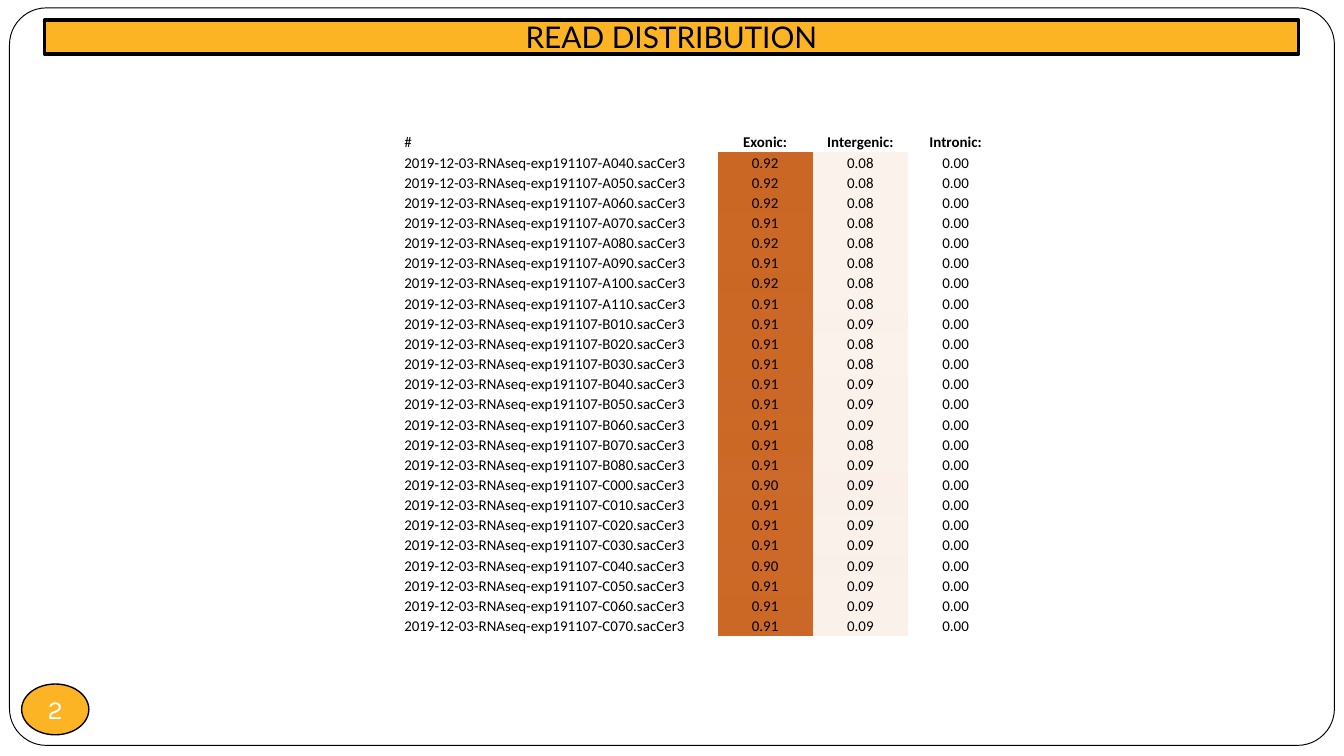
from dataclasses import dataclass

from lxml import etree
from pptx import Presentation
from pptx.dml.color import RGBColor
from pptx.enum.shapes import MSO_SHAPE
from pptx.enum.text import MSO_ANCHOR, MSO_AUTO_SIZE, PP_ALIGN
from pptx.oxml.ns import qn
from pptx.util import Cm, Pt

ROUNDED = MSO_SHAPE.ROUNDED_RECTANGLE
OVAL = MSO_SHAPE.OVAL
MIDDLE, BOTTOM = MSO_ANCHOR.MIDDLE, MSO_ANCHOR.BOTTOM
LEFT, CENTER = PP_ALIGN.LEFT, PP_ALIGN.CENTER
NO_AUTOFIT = MSO_AUTO_SIZE.NONE
NO_STYLE_NO_GRID = "{2D5ABB26-0587-4C30-8999-92F81FD0307C}"

COLORS = {
    "black": "000000",
    "white": "FFFFFF",
    "amber": "FCB424",
    "exonic 1": "CB6725",
    "exonic 2": "CB6826",
    "exonic 3": "CC6826",
    "exonic 4": "CC6827",
    "exonic 5": "CC6927",
    "exonic 6": "CC6928",
    "exonic 7": "CC6A29",
    "intergenic 1": "FBF2EC",
    "intergenic 2": "FBF1EB",
    "intergenic 3": "FAF1EB",
    "intergenic 4": "FAF1EA",
    "intergenic 5": "FAF0EA",
    "intergenic 6": "FAF0E9",
}

HEADERS = ("#", "Exonic:", "Intergenic:", "Intronic:")
COLUMN_WIDTHS = (5.94, 1.8, 1.8, 1.8)
TABLE_LEFT, TABLE_TOP, TABLE_HEIGHT = 7.62, 2.49, 9.53


@dataclass(frozen=True)
class Sample:
    """Read shares of one sample, with the shade numbers of its cells."""
    code: str
    exonic: float
    intergenic: float
    exonic_shade: int
    intergenic_shade: int
    intronic: float = 0.0

    @property
    def name(self) -> str:
        return f"2019-12-03-RNAseq-exp191107-{self.code}.sacCer3"


SAMPLES = (
    Sample("A040", 0.92, 0.08, 1, 1),
    Sample("A050", 0.92, 0.08, 1, 1),
    Sample("A060", 0.92, 0.08, 1, 1),
    Sample("A070", 0.91, 0.08, 2, 1),
    Sample("A080", 0.92, 0.08, 2, 1),
    Sample("A090", 0.91, 0.08, 2, 1),
    Sample("A100", 0.92, 0.08, 1, 1),
    Sample("A110", 0.91, 0.08, 2, 1),
    Sample("B010", 0.91, 0.09, 4, 2),
    Sample("B020", 0.91, 0.08, 2, 1),
    Sample("B030", 0.91, 0.08, 2, 1),
    Sample("B040", 0.91, 0.09, 4, 2),
    Sample("B050", 0.91, 0.09, 4, 2),
    Sample("B060", 0.91, 0.09, 5, 2),
    Sample("B070", 0.91, 0.08, 3, 2),
    Sample("B080", 0.91, 0.09, 6, 4),
    Sample("C000", 0.90, 0.09, 7, 6),
    Sample("C010", 0.91, 0.09, 6, 5),
    Sample("C020", 0.91, 0.09, 5, 4),
    Sample("C030", 0.91, 0.09, 6, 4),
    Sample("C040", 0.90, 0.09, 6, 5),
    Sample("C050", 0.91, 0.09, 5, 3),
    Sample("C060", 0.91, 0.09, 3, 2),
    Sample("C070", 0.91, 0.09, 4, 2),
)


def color(name: str) -> RGBColor:
    return RGBColor.from_string(COLORS[name])


def paint(shape, fill: str, line_width: float) -> None:
    shape.fill.solid()
    shape.fill.fore_color.rgb = color(fill)
    shape.line.color.rgb = color("black")
    shape.line.width = Pt(line_width)


def format_font(paragraph, family: str, size: float, font_color: str, bold: bool = False) -> None:
    for run in paragraph.runs:
        run.font.name = family
        run.font.size = Pt(size)
        run.font.bold = bold
        run.font.color.rgb = color(font_color)


def write_centered(shape, text: str, family: str, size: float, font_color: str) -> None:
    frame = shape.text_frame
    frame.text = text
    frame.auto_size = NO_AUTOFIT
    frame.vertical_anchor = MIDDLE
    frame.margin_left = frame.margin_right = frame.margin_top = frame.margin_bottom = 0
    paragraph = frame.paragraphs[0]
    paragraph.alignment = CENTER
    format_font(paragraph, family, size, font_color)


def add_frame(slide) -> None:
    frame = slide.shapes.add_shape(ROUNDED, Cm(0.18), Cm(0.15), Cm(25.04), Cm(13.94))
    frame.adjustments[0] = 0.05
    frame.shadow.inherit = False
    paint(frame, "white", 0.5)


def add_page_badge(slide, number: int) -> None:
    badge = slide.shapes.add_shape(OVAL, Cm(0.41), Cm(12.93), Cm(1.27), Cm(0.96))
    badge.shadow.inherit = False
    paint(badge, "amber", 0.75)
    write_centered(badge, str(number), "Karla", 14, "white")
    badge.text_frame.word_wrap = False


def format_title(slide, text: str) -> None:
    """Turn the title placeholder into a rounded bar in front of the frame."""
    title = slide.shapes.title
    title.left, title.top, title.width, title.height = Cm(0.84), Cm(0.38), Cm(23.7), Cm(0.64)
    geometry = etree.SubElement(title.element.spPr, qn("a:prstGeom"), prst="roundRect")
    etree.SubElement(geometry, qn("a:avLst"))
    paint(title, "amber", 2)
    write_centered(title, text, "Lato", 16, "black")
    title.element.getparent().append(title.element)


def fill_cell(cell, text: str, alignment, fill: str | None = None, bold: bool = False) -> None:
    cell.text = text
    cell.vertical_anchor = BOTTOM
    cell.margin_left = cell.margin_right = cell.margin_top = Cm(0.02)
    cell.margin_bottom = 0
    if fill:
        cell.fill.solid()
        cell.fill.fore_color.rgb = color(fill)
    else:
        cell.fill.background()
    paragraph = cell.text_frame.paragraphs[0]
    paragraph.alignment = alignment
    format_font(paragraph, "Calibri", 8, "black", bold)


def add_read_table(slide) -> None:
    row_count = len(SAMPLES) + 1
    table = slide.shapes.add_table(
        row_count, len(HEADERS), Cm(TABLE_LEFT), Cm(TABLE_TOP),
        Cm(sum(COLUMN_WIDTHS)), Cm(TABLE_HEIGHT),
    ).table
    table.first_row = table.horz_banding = False
    table._tbl.tblPr.find(qn("a:tableStyleId")).text = NO_STYLE_NO_GRID
    for column, width in zip(table.columns, COLUMN_WIDTHS):
        column.width = Cm(width)
    for row in table.rows:
        row.height = Cm(TABLE_HEIGHT / row_count)

    for index, header in enumerate(HEADERS):
        fill_cell(table.cell(0, index), header, CENTER if index else LEFT, bold=index > 0)
    for row_index, sample in enumerate(SAMPLES, start=1):
        fill_cell(table.cell(row_index, 0), sample.name, LEFT)
        shares = (
            (sample.exonic, f"exonic {sample.exonic_shade}"),
            (sample.intergenic, f"intergenic {sample.intergenic_shade}"),
            (sample.intronic, "white"),
        )
        for column_index, (share, fill) in enumerate(shares, start=1):
            fill_cell(table.cell(row_index, column_index), f"{share:.2f}", CENTER, fill)


def main() -> None:
    presentation = Presentation()
    presentation.slide_width, presentation.slide_height = Cm(25.4), Cm(14.29)
    slide = presentation.slides.add_slide(presentation.slide_layouts[5])
    add_frame(slide)
    add_page_badge(slide, 2)
    format_title(slide, "READ DISTRIBUTION")
    add_read_table(slide)
    presentation.save("out.pptx")


if __name__ == "__main__":
    main()
